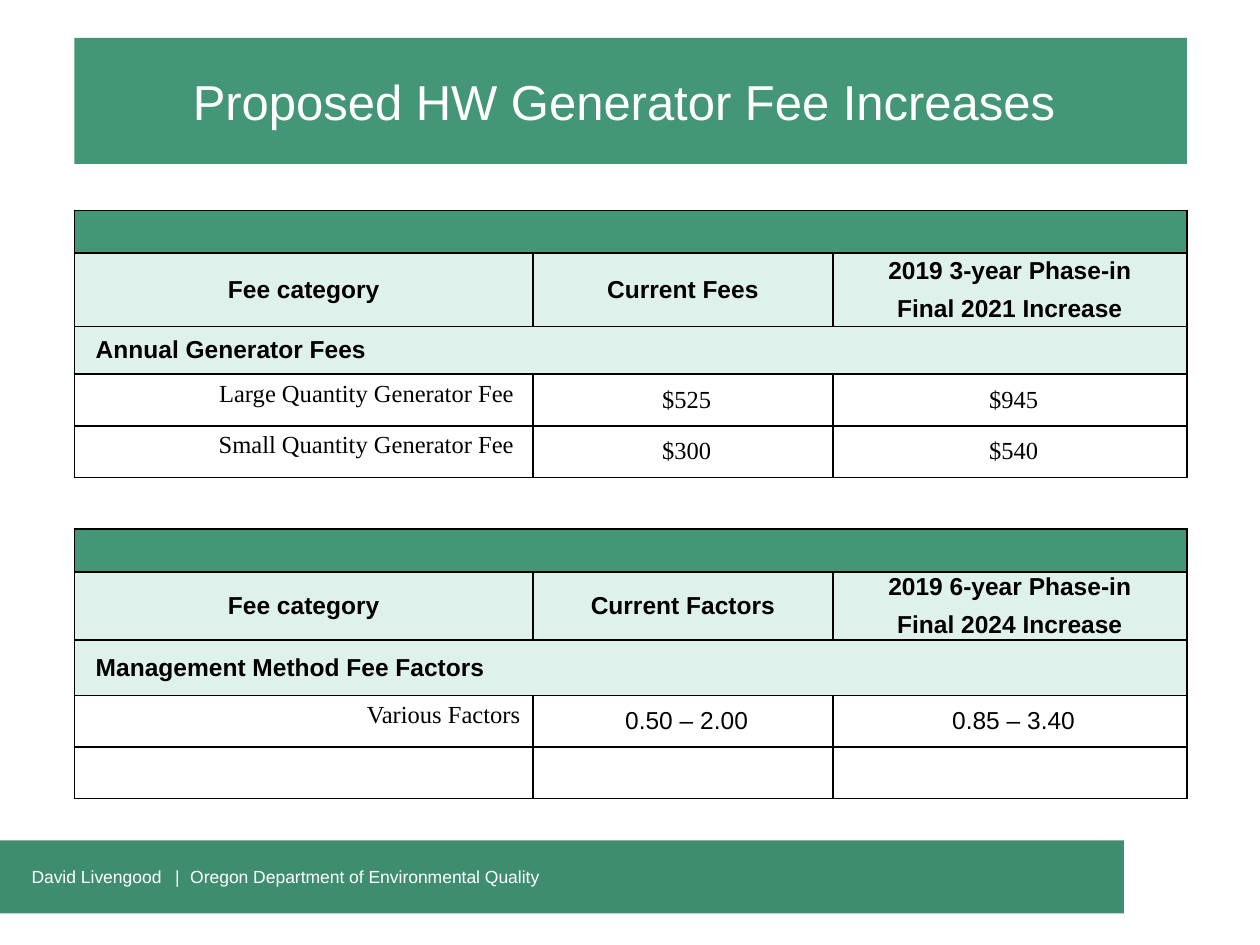
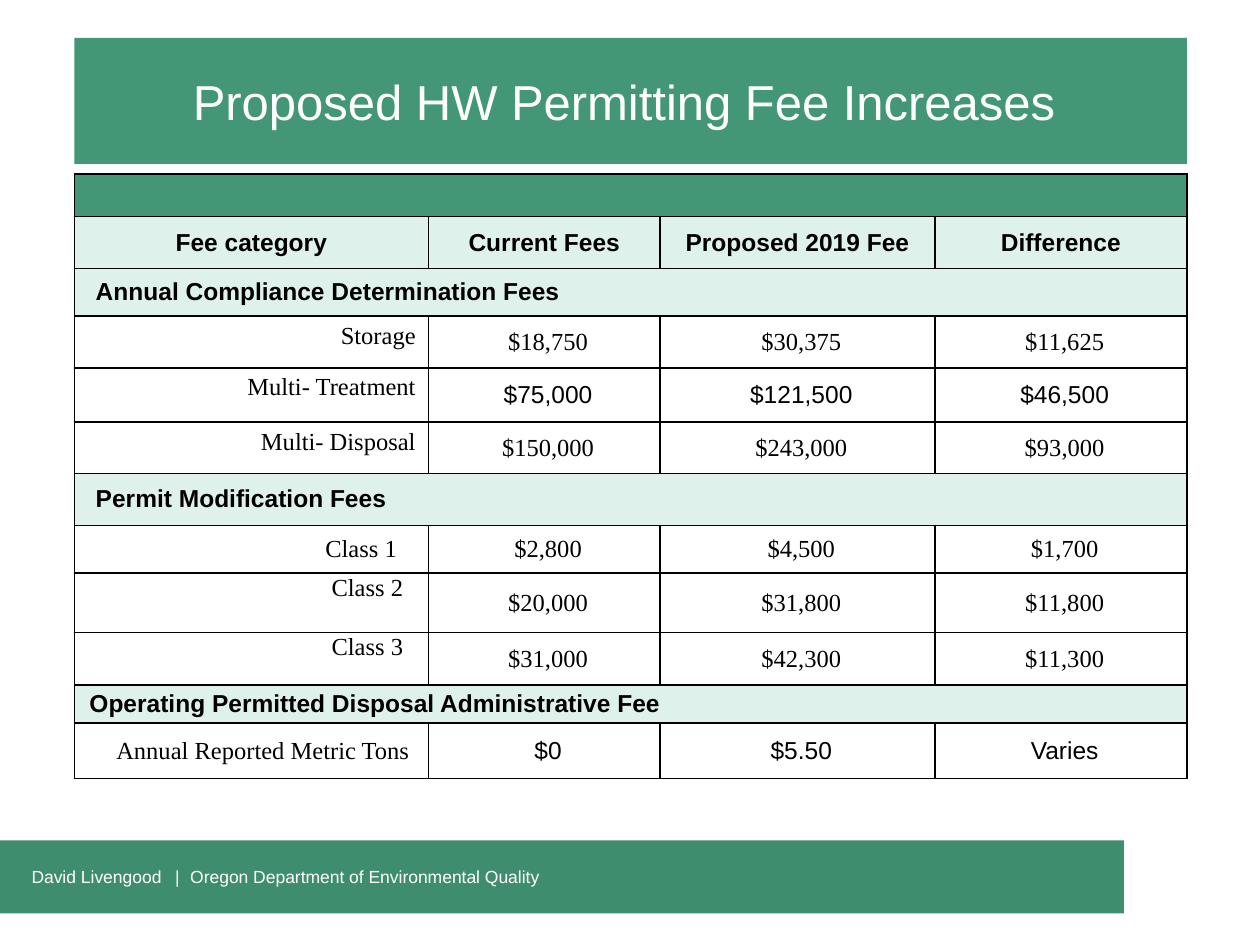
from lxml.etree import SubElement
from pptx import Presentation
from pptx.dml.color import RGBColor
from pptx.enum.shapes import MSO_SHAPE
from pptx.enum.text import MSO_ANCHOR as Anchor, PP_ALIGN as Align
from pptx.oxml import parse_xml
from pptx.oxml.ns import nsdecls, qn
from pptx.util import Inches, Pt

GREEN = RGBColor(0x43, 0x97, 0x77)
FOOTER_GREEN = RGBColor(0x3F, 0x8D, 0x6F)
MINT = RGBColor(0xDF, 0xF1, 0xEB)
WHITE = RGBColor(0xFF, 0xFF, 0xFF)
BLACK = RGBColor(0x00, 0x00, 0x00)
SANS, SERIF = "Arial", "Times New Roman"

WIDTH, HEIGHT = Inches(10), Inches(7.5)
LEFT, CONTENT_WIDTH = Inches(0.59), Inches(8.83)
THIN = 0.01  # cell inset in inches
ROW_FILLS = {"band": GREEN, "header": MINT, "section": MINT, "fee": WHITE, "gap": WHITE}

# Label styles: anchor, top inset, right inset
TOP = (Anchor.TOP, 0.05, 0.1)
TOP_SPACED = (Anchor.TOP, 0.05, 0.15)
CLASS_MIDDLE = (Anchor.MIDDLE, THIN, 0.25)
CLASS_TOP = (Anchor.TOP, THIN, 0.2)
MIDDLE = (Anchor.MIDDLE, THIN, 0.15)

# Each row: kind, height, texts; a fee row adds its label style and value font
slides = [
    {
        "title": "Proposed HW Generator Fee Increases ",
        "top": 1.67,
        "columns": [3.64, 2.38, 2.81],
        "rows": [
            ("band", 0.34, []),
            ("header", 0.58, ["Fee category", "Current Fees",
                              "2019 3-year Phase-in\nFinal 2021 Increase"]),
            ("section", 0.38, ["Annual Generator Fees"]),
            ("fee", 0.41, ["Large Quantity Generator Fee", "$525", "$945"], TOP_SPACED, SERIF),
            ("fee", 0.41, ["Small Quantity Generator Fee", "$300", "$540"], TOP_SPACED, SERIF),
            ("gap", 0.41, []),
            ("band", 0.34, []),
            ("header", 0.54, ["Fee category", "Current Factors",
                              "2019 6-year Phase-in\nFinal 2024 Increase"]),
            ("section", 0.44, ["Management Method Fee Factors"]),
            ("fee", 0.41, ["Various Factors", "0.50 – 2.00", "0.85 – 3.40"], TOP, SANS),
            ("fee", 0.41, ["", "", ""], TOP, SANS),
        ],
    },
    {
        "title": "Proposed HW Permitting Fee Increases ",
        "top": 1.38,
        "columns": [2.81, 1.84, 2.18, 2],
        "rows": [
            ("band", 0.34, []),
            ("header", 0.41, ["Fee category", "Current Fees", "Proposed 2019 Fee", "Difference"]),
            ("section", 0.38, ["Annual Compliance Determination Fees"]),
            ("fee", 0.41, ["Storage", "$18,750", "$30,375", "$11,625"], TOP, SERIF),
            ("fee", 0.43, ["Multi- Treatment", "$75,000", "$121,500", "$46,500"], TOP, SANS),
            ("fee", 0.41, ["Multi- Disposal", "$150,000", "$243,000", "$93,000"], TOP, SERIF),
            ("section", 0.41, ["Permit Modification Fees"]),
            ("fee", 0.38, ["Class 1", "$2,800", "$4,500", "$1,700"], CLASS_MIDDLE, SERIF),
            ("fee", 0.47, ["Class 2", "$20,000", "$31,800", "$11,800"], CLASS_TOP, SERIF),
            ("fee", 0.42, ["Class 3", "$31,000", "$42,300", "$11,300"], CLASS_TOP, SERIF),
            ("section", 0.3, ["Operating Permitted Disposal Administrative Fee"], 0.12),
            ("fee", 0.44, ["Annual Reported Metric Tons", "$0", "$5.50", "Varies"], MIDDLE, SANS),
        ],
    },
]


def style_text(paragraph, size, font_name, color, bold=False):
    paragraph.font.size = Pt(size)
    paragraph.font.name = font_name
    paragraph.font.color.rgb = color
    paragraph.font.bold = bold


def draw_borders(cell, open_sides):
    properties = cell._tc.get_or_add_tcPr()
    for position, side in enumerate(["lnL", "lnR", "lnT", "lnB"]):
        hidden = open_sides and side in ("lnL", "lnR")
        paint = "<a:noFill/>" if hidden else f'<a:solidFill><a:srgbClr val="{BLACK}"/></a:solidFill>'
        line = parse_xml(f'<a:{side} {nsdecls("a")} w="{Pt(1)}">{paint}</a:{side}>')
        properties.insert(position, line)


presentation = Presentation()
presentation.slide_width, presentation.slide_height = WIDTH, HEIGHT

for content in slides:
    slide = presentation.slides.add_slide(presentation.slide_layouts[5])

    # Title band
    title = slide.shapes.title
    title.left, title.top, title.width, title.height = LEFT, Inches(0.3), CONTENT_WIDTH, Inches(1)
    title.fill.solid()
    title.fill.fore_color.rgb = GREEN
    title.text_frame.text = content["title"]
    title.text_frame.vertical_anchor = Anchor.MIDDLE
    paragraph = title.text_frame.paragraphs[0]
    paragraph.alignment = Align.CENTER
    style_text(paragraph, 28, SANS, WHITE)

    # Footer band, with tab stops around the divider
    footer = slide.shapes.add_shape(MSO_SHAPE.RECTANGLE, 0, Inches(6.67), Inches(8.92), Inches(0.58))
    footer.shadow.inherit = False
    footer.fill.solid()
    footer.fill.fore_color.rgb = FOOTER_GREEN
    footer.line.fill.background()
    footer.text_frame.margin_left = Inches(0.25)
    footer.text_frame.vertical_anchor = Anchor.MIDDLE
    paragraph = footer.text_frame.paragraphs[0]
    paragraph.text = "David Livengood\t|\tOregon Department of Environmental Quality"
    paragraph.alignment = Align.LEFT
    tab_list = SubElement(paragraph._p.get_or_add_pPr(), qn("a:tabLst"))
    for stop in (1.14, 1.26):
        SubElement(tab_list, qn("a:tab"), pos=str(Inches(stop)), algn="l")
    style_text(paragraph, 10, SANS, WHITE)

    # Fee table
    columns, rows = content["columns"], content["rows"]
    table_height = Inches(sum(row[1] for row in rows))
    table = slide.shapes.add_table(len(rows), len(columns), LEFT, Inches(content["top"]),
                                   CONTENT_WIDTH, table_height).table
    table.first_row = table.horz_banding = False
    for column, width in zip(table.columns, columns):
        column.width = Inches(width)

    for row_index, (kind, height, texts, *options) in enumerate(rows):
        table.rows[row_index].height = Inches(height)
        for column_index in range(len(columns)):
            cell = table.cell(row_index, column_index)
            cell.fill.solid()
            cell.fill.fore_color.rgb = ROW_FILLS[kind]
            draw_borders(cell, open_sides=kind == "gap")

            # Text position by row kind
            anchor, top, left, right = Anchor.MIDDLE, THIN, THIN, THIN
            alignment, font_name = Align.CENTER, SANS
            if kind == "section":
                alignment = Align.LEFT
                left = options[0] if options else 0.17
            elif kind == "fee" and column_index == 0:
                alignment, font_name = Align.RIGHT, SERIF
                anchor, top, right = options[0]
            elif kind == "fee":
                left, font_name = 0.07, options[1]
            cell.vertical_anchor = anchor
            cell.margin_top, cell.margin_bottom = Inches(top), Inches(THIN)
            cell.margin_left, cell.margin_right = Inches(left), Inches(right)

            if column_index < len(texts):
                cell.text = texts[column_index]
            for paragraph in cell.text_frame.paragraphs:
                paragraph.alignment = alignment
                paragraph.space_after = Pt(6)
                style_text(paragraph, 14, font_name, BLACK, bold=kind in ("header", "section"))
        if kind in ("band", "section"):
            table.cell(row_index, 0).merge(table.cell(row_index, len(columns) - 1))

presentation.save("out.pptx")
